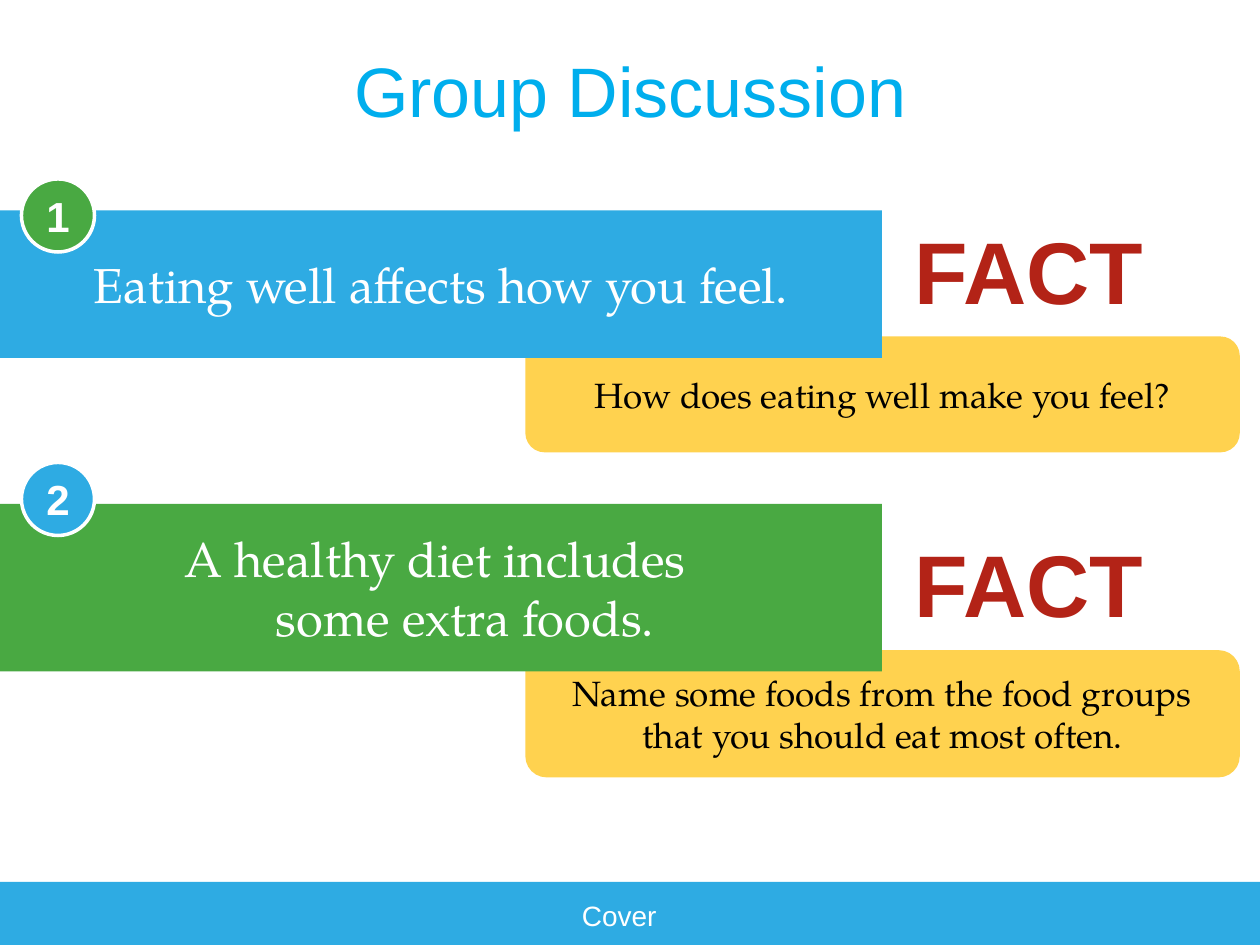
from pptx import Presentation
from pptx.dml.color import RGBColor
from pptx.enum.shapes import MSO_SHAPE
from pptx.enum.text import MSO_ANCHOR, MSO_AUTO_SIZE, PP_ALIGN
from pptx.util import Inches, Pt

RECT, ROUND, OVAL = MSO_SHAPE.RECTANGLE, MSO_SHAPE.ROUNDED_RECTANGLE, MSO_SHAPE.OVAL
TOP, MIDDLE = MSO_ANCHOR.TOP, MSO_ANCHOR.MIDDLE
CENTER, NO_FIT = PP_ALIGN.CENTER, MSO_AUTO_SIZE.NONE
TITLE_ONLY = 5

BLUE, GREEN, YELLOW = "2EABE3", "49A942", "FFD24F"
RED, SKY, WHITE, BLACK = "B32317", "00AEED", "FFFFFF", "000000"

# Text formats
SERIF, SANS = "TeX Gyre Pagella", "Arial"
TITLE = dict(name=SANS, size=Pt(40), color=SKY, bold=False)
STATEMENT = dict(name=SERIF, size=Pt(28), color=WHITE)
QUESTION = dict(name=SERIF, size=Pt(20), color=BLACK)
VERDICT = dict(name=SANS, size=Pt(50), color=RED, bold=True)
NUMBER = dict(name=SANS, size=Pt(24), color=WHITE, bold=True)
FOOTER = dict(name=SANS, size=Pt(16), color=WHITE)


def rgb(value):
    return RGBColor.from_string(value)


def write(shape, text, style, anchor=MIDDLE, hanging=0):
    frame = shape.text_frame
    for key, value in dict(word_wrap=True, auto_size=NO_FIT, vertical_anchor=anchor).items():
        setattr(frame, key, value)
    frame.text = text
    paragraph = frame.paragraphs[0]
    paragraph.alignment = CENTER
    if hanging:
        properties = paragraph._p.get_or_add_pPr()
        properties.set("marL", str(Inches(hanging)))
        properties.set("indent", str(-Inches(hanging)))
    for run in paragraph.runs:
        for key, value in style.items():
            if key == "color":
                run.font.color.rgb = rgb(value)
            else:
                setattr(run.font, key, value)


def add_block(slide, kind, box, fill, outline=None):
    block = slide.shapes.add_shape(kind, *map(Inches, box))
    block.shadow.inherit = False
    block.fill.solid()
    block.fill.fore_color.rgb = rgb(fill)
    if outline:
        block.line.color.rgb = rgb(outline)
        block.line.width = Pt(2)
    else:
        block.line.fill.background()
    return block


def add_label(slide, box, text, style):
    write(slide.shapes.add_textbox(*map(Inches, box)), text, style, TOP)


def add_title(slide, box, text):
    title = slide.shapes.title
    title.left, title.top, title.width, title.height = map(Inches, box)
    write(title, text, TITLE)


def add_topic(slide, box, topic):
    """Statement banner with its question, verdict and number badge."""
    left, top, width, height = box
    # Question tucked under the banner's lower edge
    question_box = (left + 4.17, top + height - 0.17, 5.67, topic["question_height"])
    write(add_block(slide, ROUND, question_box, YELLOW), topic["question"], QUESTION)
    # Statement banner
    banner = add_block(slide, RECT, box, topic["fill"])
    write(banner, topic["statement"], STATEMENT, hanging=0.38)
    # Verdict beside the banner
    add_label(slide, (left + width + 0.08, topic["verdict_top"], 2.17, 0.94), "FACT", VERDICT)
    # Number badge on the banner's upper edge
    badge_box = (left + 0.17, topic["badge_top"], 0.58, 0.58)
    badge = add_block(slide, OVAL, badge_box, topic["badge_fill"], WHITE)
    write(badge, topic["number"], NUMBER)


def add_footer(slide, box):
    left, top, _, _ = box
    add_block(slide, RECT, box, BLUE)
    add_label(slide, (left + 3.75, top + 0.08, 2.33, 0.37), "Cover", FOOTER)


TOPICS = [
    ((0, 1.67, 7, 1.17), dict(
        number="1", fill=BLUE, badge_fill=GREEN, badge_top=1.42, verdict_top=1.67,
        statement="Eating well affects how you feel.",
        question="How does eating well make you feel?", question_height=0.92)),
    ((0, 4, 7, 1.33), dict(
        number="2", fill=GREEN, badge_fill=BLUE, badge_top=3.67, verdict_top=4.16,
        statement="A healthy diet includes \vsome extra foods.",
        question="Name some foods from the food groups that you should eat most often.",
        question_height=1.01)),
]


def main():
    deck = Presentation()
    deck.slide_width, deck.slide_height = Inches(10), Inches(7.5)
    slide = deck.slides.add_slide(deck.slide_layouts[TITLE_ONLY])
    add_title(slide, (0.5, 0.25, 9, 0.92), "Group Discussion")
    for box, topic in TOPICS:
        add_topic(slide, box, topic)
    add_footer(slide, (0, 7, 10, 0.5))
    deck.save("out.pptx")


if __name__ == "__main__":
    main()
